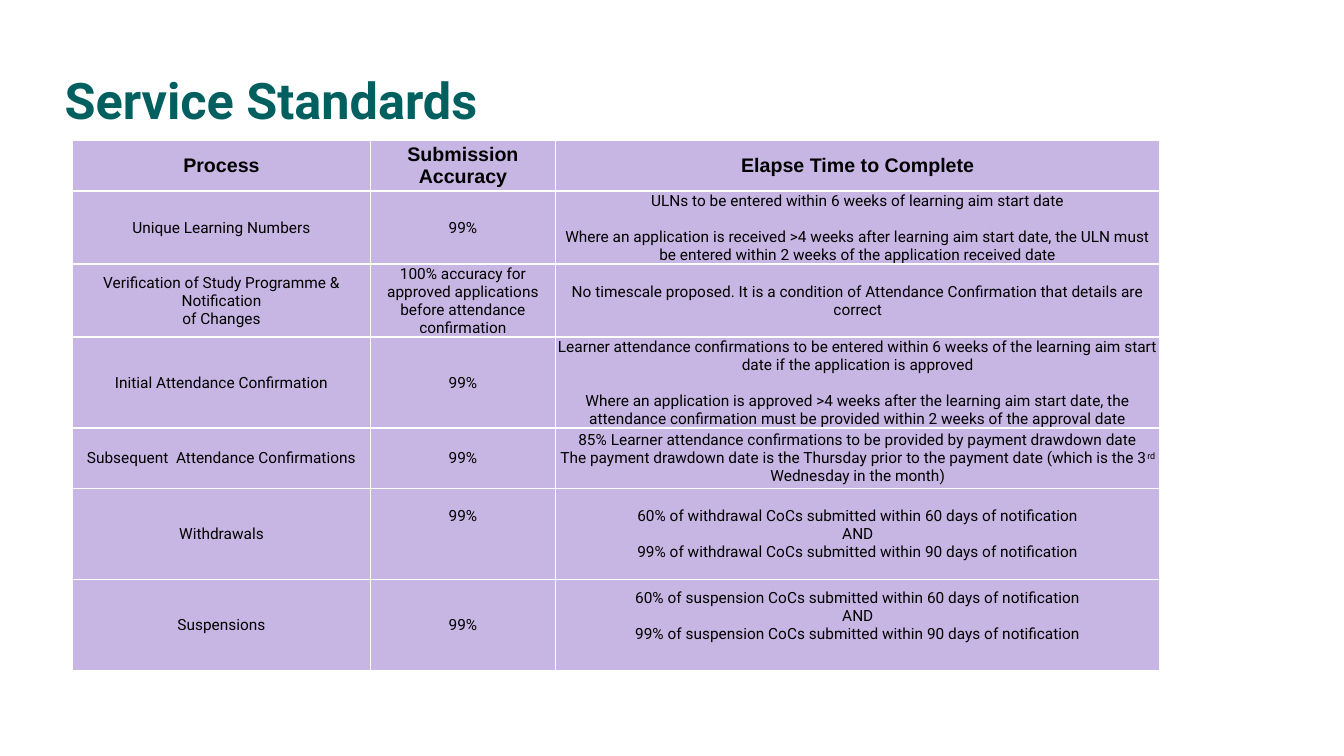
from pptx import Presentation
from pptx.dml.color import RGBColor
from pptx.enum.text import MSO_ANCHOR, PP_ALIGN
from pptx.oxml import parse_xml
from pptx.oxml.ns import nsdecls
from pptx.util import Pt

TOP, MIDDLE = MSO_ANCHOR.TOP, MSO_ANCHOR.MIDDLE
LEFT, CENTER = PP_ALIGN.LEFT, PP_ALIGN.CENTER

COLORS = {"title": "006060", "text": "000000", "cell": "C7B6E3", "border": "FFFFFF"}
LINE = 12.9  # height of one line of body text
COLUMN_WIDTHS = [212.5, 132.5, 431.5]
ROW_HEIGHTS = [36.5, 52.1, 52.1, 65, 43, 65, 65]
HEADINGS = ["Process", "Submission Accuracy", "Elapse Time to Complete"]

# Each cell is a list of paragraphs; a paragraph is a string or a list of runs,
# where "^" marks a superscript run.
STANDARDS = [
    (["Unique Learning Numbers"], ["99%"],
     ["ULNs to be entered within 6 weeks of learning aim start date",
      "Where an application is received >4 weeks after learning aim start date, "
      "the ULN must be entered within 2 weeks of the application received date"]),
    (["Verification of Study Programme & Notification", "of Changes"],
     ["100% accuracy for approved applications before attendance confirmation"],
     ["No timescale proposed. It is a condition of Attendance Confirmation "
      "that details are correct"]),
    (["Initial Attendance Confirmation"], ["99%"],
     ["Learner attendance confirmations to be entered within 6 weeks of the "
      "learning aim start date if the application is approved",
      "Where an application is approved >4 weeks after the learning aim start date, the "
      "attendance confirmation must be provided within 2 weeks of the approval date"]),
    (["Subsequent  Attendance Confirmations"], ["99%"],
     ["85% Learner attendance confirmations to be provided by payment drawdown date",
      ["The payment drawdown date is the Thursday prior to the payment date "
       "(which is the 3", "^rd", " Wednesday in the month)"]]),
    (["Withdrawals"], ["99%"],
     ["60% of withdrawal CoCs submitted within 60 days of notification", "AND",
      "99% of withdrawal CoCs submitted within 90 days of notification"]),
    (["Suspensions"], ["99%"],
     ["60% of suspension CoCs submitted within 60 days of notification", "AND",
      "99% of suspension CoCs submitted within 90 days of notification"]),
]

# Cells that differ from the plain body format, by (row, column)
CELL_FORMATS = {
    (1, 2): {"gap": LINE},
    (3, 2): {"gap": LINE},
    (5, 1): {"anchor": TOP, "top": LINE + 0.7},
    (6, 2): {"bottom": LINE},
}


def write_text(frame, paragraphs, *, size, font="Roboto", color="text", bold=False,
               align=CENTER, gap=0, line_spacing=None):
    for index, content in enumerate(paragraphs):
        paragraph = frame.add_paragraph() if index else frame.paragraphs[0]
        paragraph.alignment = align
        if index and gap:
            paragraph.space_before = Pt(gap)
        if line_spacing:
            paragraph.line_spacing = line_spacing
        for text in [content] if isinstance(content, str) else content:
            run = paragraph.add_run()
            run.text = text.removeprefix("^")
            run.font.name = font
            run.font.size = Pt(size)
            run.font.bold = bold
            run.font.color.rgb = RGBColor.from_string(COLORS[color])
            if text.startswith("^"):
                run.font._element.set("baseline", "30000")


def add_borders(cell):
    properties = cell._tc.get_or_add_tcPr()
    for side in ("lnL", "lnR", "lnT", "lnB"):
        properties.append(parse_xml(
            f'<a:{side} {nsdecls("a")} w="{Pt(1)}"><a:solidFill>'
            f'<a:srgbClr val="{COLORS["border"]}"/></a:solidFill></a:{side}>'))


def fill_cell(cell, paragraphs, *, side=0.7, top=0.7, bottom=0, anchor=MIDDLE, **text_format):
    add_borders(cell)
    cell.fill.solid()
    cell.fill.fore_color.rgb = RGBColor.from_string(COLORS["cell"])
    cell.margin_left = cell.margin_right = Pt(side)
    cell.margin_top, cell.margin_bottom = Pt(top), Pt(bottom)
    cell.vertical_anchor = anchor
    write_text(cell.text_frame, paragraphs, **text_format)


def add_title(slide, text):
    title = slide.shapes.title
    title.left, title.top, title.width, title.height = Pt(39), Pt(50.5), Pt(536.5), Pt(57)
    title.text_frame.word_wrap = True
    title.text_frame.vertical_anchor = TOP
    write_text(title.text_frame, [text], size=36, color="title", bold=True,
               align=LEFT, line_spacing=0.9)


def add_standards_table(slide):
    table = slide.shapes.add_table(
        len(ROW_HEIGHTS), len(COLUMN_WIDTHS), Pt(52), Pt(100),
        Pt(sum(COLUMN_WIDTHS)), Pt(sum(ROW_HEIGHTS))).table
    table.first_row = table.horz_banding = False
    for column, width in zip(table.columns, COLUMN_WIDTHS):
        column.width = Pt(width)
    for row, height in zip(table.rows, ROW_HEIGHTS):
        row.height = Pt(height)
    for column, heading in enumerate(HEADINGS):
        fill_cell(table.cell(0, column), [heading], side=5, top=2, bottom=2,
                  size=14, font="Arial", bold=True)
    for row, standard in enumerate(STANDARDS, start=1):
        for column, paragraphs in enumerate(standard):
            fill_cell(table.cell(row, column), paragraphs, size=11,
                      **CELL_FORMATS.get((row, column), {}))


def main():
    presentation = Presentation()
    presentation.slide_width, presentation.slide_height = Pt(960), Pt(540)
    slide = presentation.slides.add_slide(presentation.slide_layouts[5])
    add_title(slide, "Service Standards")
    add_standards_table(slide)
    presentation.save("out.pptx")


if __name__ == "__main__":
    main()
